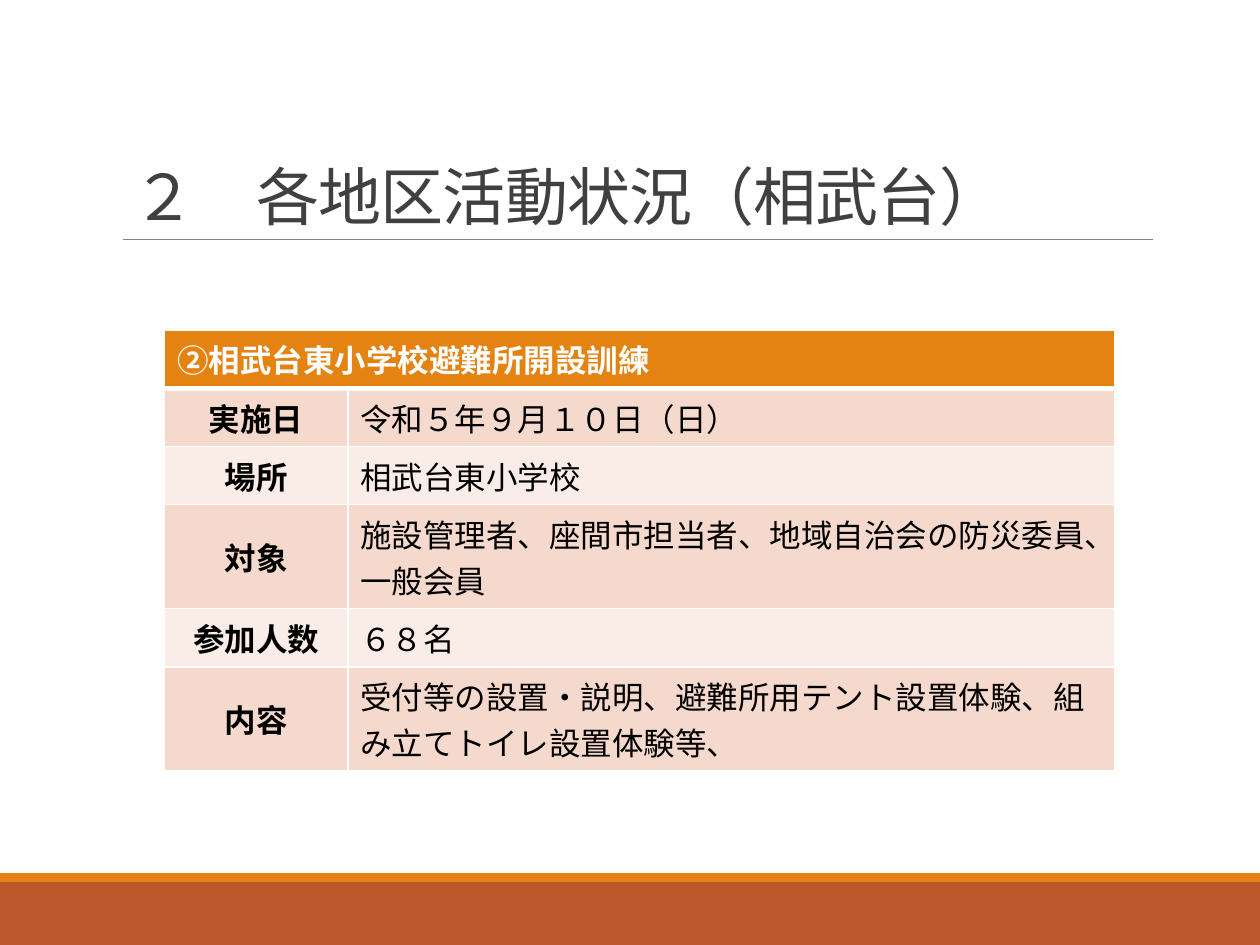
import pptx
import pptx.dml.color
import pptx.enum.shapes
import pptx.enum.text
import pptx.oxml.ns
import pptx.util
from lxml import etree

Pt = pptx.util.Pt
qn = pptx.oxml.ns.qn
ALIGN = pptx.enum.text.PP_ALIGN
ANCHOR = pptx.enum.text.MSO_ANCHOR

FONT = "Calibri"
COLORS = {
    "title": "404040",
    "rule": "808080",
    "orange": "E48312",
    "rust": "BD582C",
    "band_dark": "F5D9CC",
    "band_light": "FAEDE7",
    "white": "FFFFFF",
    "black": "000000",
}
TITLE = "２\u3000各地区活動状況（相武台）".replace("\u3000", chr(0x3000))
HEADING = "②相武台東小学校避難所開設訓練"
DETAILS = [
    ("実施日", "令和５年９月１０日（日）"),
    ("場所", "相武台東小学校"),
    ("対象", "施設管理者、座間市担当者、地域自治会の防災委員、一般会員"),
    ("参加人数", "６８名"),
    ("内容", "受付等の設置・説明、避難所用テント設置体験、組み立てトイレ設置体験等、"),
]


def rgb(name):
    return pptx.dml.color.RGBColor.from_string(COLORS[name])


def add_run(paragraph, text, size, color, bold=False):
    run = paragraph.add_run()
    run.text = text
    run.font.name = FONT
    run.font.size = Pt(size)
    run.font.bold = bold
    run.font.color.rgb = rgb(color)
    return run


def add_footer_bands(slide, left, top, width, height):
    """Thin orange stripe above a rust band."""
    stripe = 5
    bands = [("rust", top + stripe, height - stripe), ("orange", top, stripe)]
    for color, band_top, band_height in bands:
        band = slide.shapes.add_shape(
            pptx.enum.shapes.MSO_SHAPE.RECTANGLE,
            Pt(left), Pt(band_top), Pt(width), Pt(band_height))
        band.shadow.inherit = False
        band.fill.solid()
        band.fill.fore_color.rgb = rgb(color)
        band.line.fill.background()


def add_title(slide, left, top, width, height):
    """Title resting on a thin rule."""
    rule_y = Pt(top + height)
    rule = slide.shapes.add_connector(
        pptx.enum.shapes.MSO_CONNECTOR.STRAIGHT,
        Pt(left + 2), rule_y, Pt(left + width - 3.5), rule_y)
    rule.line.color.rgb = rgb("rule")
    rule.line.width = Pt(0.5)
    etree.SubElement(rule._element.spPr, qn("a:effectLst"))

    title = slide.shapes.title
    title.left, title.top = Pt(left), Pt(top)
    title.width, title.height = Pt(width), Pt(height)
    frame = title.text_frame
    frame.word_wrap = True
    frame.auto_size = pptx.enum.text.MSO_AUTO_SIZE.NONE
    frame.vertical_anchor = ANCHOR.BOTTOM
    paragraph = frame.paragraphs[0]
    paragraph.alignment = ALIGN.LEFT
    paragraph.line_spacing = 0.85
    run = add_run(paragraph, TITLE, 36, "title")
    run.font._element.set("spc", "-50")


def set_borders(cell, top=1, bottom=1):
    properties = cell._tc.get_or_add_tcPr()
    for side, width in (("L", 1), ("R", 1), ("T", top), ("B", bottom)):
        line = etree.SubElement(properties, qn(f"a:ln{side}"), w=str(Pt(width)))
        fill = etree.SubElement(line, qn("a:solidFill"))
        etree.SubElement(fill, qn("a:srgbClr"), val=COLORS["white"])


def fill_cell(cell, text, fill, color="black", bold=False, centered=False):
    cell.fill.solid()
    cell.fill.fore_color.rgb = rgb(fill)
    paragraph = cell.text_frame.paragraphs[0]
    if centered:
        cell.vertical_anchor = ANCHOR.MIDDLE
        paragraph.alignment = ALIGN.CENTER
    if text:
        add_run(paragraph, text, 18, color, bold)


def add_details_table(slide, left, top, width, label_width, row_height):
    """Merged heading row, then one banded row per detail."""
    row_count = len(DETAILS) + 1
    table = slide.shapes.add_table(
        row_count, 2, Pt(left), Pt(top), Pt(width),
        Pt(row_height * row_count)).table
    table.columns[0].width = Pt(label_width)
    table.columns[1].width = Pt(width - label_width)

    # Heading
    table.cell(0, 0).merge(table.cell(0, 1))
    for column, text in enumerate((HEADING, "")):
        cell = table.cell(0, column)
        set_borders(cell, bottom=3)
        fill_cell(cell, text, "orange", "white", bold=True)

    # Details
    for row, texts in enumerate(DETAILS, start=1):
        band = "band_dark" if row % 2 else "band_light"
        for column, text in enumerate(texts):
            cell = table.cell(row, column)
            set_borders(cell, top=3 if row == 1 else 1)
            is_label = column == 0
            fill_cell(cell, text, band, bold=is_label, centered=is_label)


def main():
    presentation = pptx.Presentation()
    presentation.slide_width, presentation.slide_height = Pt(720), Pt(540)
    slide = presentation.slides.add_slide(presentation.slide_layouts[5])
    add_footer_bands(slide, 0, 499, 720, 41)
    add_title(slide, 68.4, 22.5, 594, 114.3)
    add_details_table(slide, 94, 188.6, 543, 104.8, 29.2)
    presentation.save("out.pptx")


if __name__ == "__main__":
    main()
